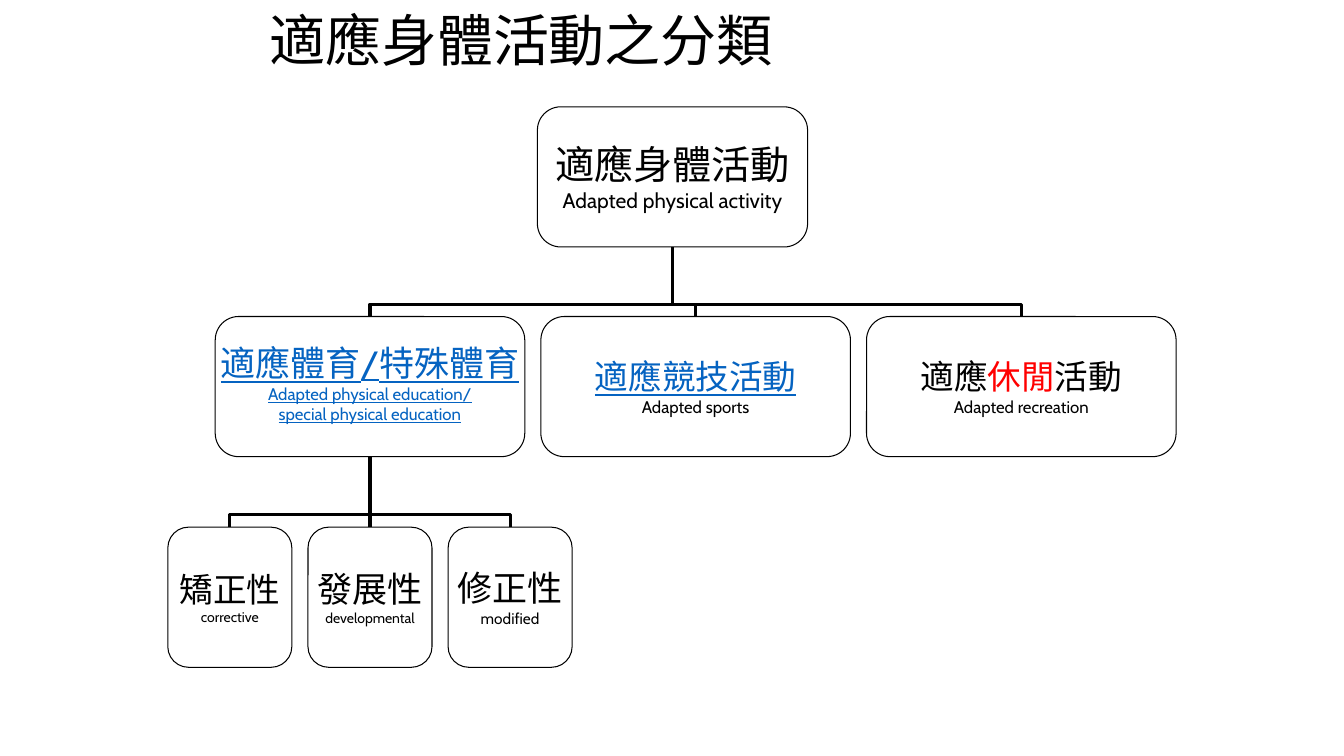
import pptx
import pptx.dml.color
import pptx.enum.shapes
import pptx.enum.text
import pptx.oxml.ns
import pptx.util
from lxml import etree

Inches = pptx.util.Inches
Pt = pptx.util.Pt

THEME = {
    "font": "Cabin", "cjk": "Noto Sans CJK SC",
    "ink": "000000", "link": "0563C1", "accent": "FF0000", "paper": "FFFFFF",
    "title": 40, "outline": 0.75, "branch": 2.25,
}

TITLE = "適應身體活動之分類"

# Each box: name, parent, bottom inset, paragraphs.
# Each paragraph: size, then runs of (text, colour, underlined).
ROWS = [
    {"top": 1.06, "center": 6.67, "width": 2.68, "pitch": 0, "boxes": [
        ("activity", None, 0, [
            (28, [("適應身體活動", "ink", False)]),
            (15, [("Adapted physical activity", "ink", False)])]),
    ]},
    {"top": 3.14, "center": 6.9, "width": 3.07, "pitch": 3.23, "boxes": [
        ("education", "activity", 0.07, [
            (25, [("適應體育/特殊體育", "link", True)]),
            (12, [("Adapted physical education/", "link", True)]),
            (12, [("special physical education", "link", True)])]),
        ("sports", "activity", 0, [
            (24, [("適應競技活動", "link", True)]),
            (12, [("Adapted sports", "ink", False)])]),
        ("recreation", "activity", 0, [
            (24, [("適應", "ink", False), ("休閒", "accent", False),
                  ("活動", "ink", False)]),
            (12, [("Adapted recreation", "ink", False)])]),
    ]},
    {"top": 5.23, "center": 3.67, "width": 1.23, "pitch": 1.39, "boxes": [
        ("corrective", "education", 0, [
            (24, [("矯正性", "ink", False)]),
            (10, [("corrective", "ink", False)])]),
        ("developmental", "education", 0, [
            (25, [("發展性", "ink", False)]),
            (10, [("developmental", "ink", False)])]),
        ("modified", "education", 0, [
            (25, [("修正性", "ink", False)]),
            (11, [("modified", "ink", False)])]),
    ]},
]
BOX_HEIGHT = 1.39
BEND = 17900  # share of the drop, in 1/100000, at which a branch turns
TOP, BOTTOM = 0, 2


def color(name):
    return pptx.dml.color.RGBColor.from_string(THEME[name])


def add_text(p, text, size, font="font", ink="ink", underline=False):
    r = p.add_run()
    r.text = text
    r.font.size = Pt(size)
    r.font.name = THEME[font]
    r.font.color.rgb = color(ink)
    r.font.underline = underline
    ea = etree.SubElement(r.font._element, pptx.oxml.ns.qn("a:ea"))
    ea.set("typeface", THEME["cjk"])


def add_box(s, left, top, width, inset, paragraphs):
    sp = s.shapes.add_shape(
        pptx.enum.shapes.MSO_SHAPE.ROUNDED_RECTANGLE,
        Inches(left), Inches(top), Inches(width), Inches(BOX_HEIGHT))
    sp.adjustments[0] = 0.167
    sp.shadow.inherit = False
    sp.fill.solid()
    sp.fill.fore_color.rgb = color("paper")
    sp.line.color.rgb = color("ink")
    sp.line.width = Pt(THEME["outline"])
    tf = sp.text_frame
    tf.word_wrap = False
    tf.vertical_anchor = pptx.enum.text.MSO_ANCHOR.MIDDLE
    tf.margin_left = tf.margin_top = tf.margin_right = 0
    tf.margin_bottom = Inches(inset)
    for i, (size, runs) in enumerate(paragraphs):
        p = tf.paragraphs[0] if i == 0 else tf.add_paragraph()
        p.alignment = pptx.enum.text.PP_ALIGN.CENTER
        for text, ink, underline in runs:
            add_text(p, text, size, ink=ink, underline=underline)
    return sp


def add_branch(s, child, parent):
    """Join a box's top to its parent's bottom, turning just above the box."""
    kinds = pptx.enum.shapes.MSO_CONNECTOR
    x1, y1 = child.left + child.width // 2, child.top
    x2, y2 = parent.left + parent.width // 2, parent.top + parent.height
    bent = abs(x1 - x2) > Inches(0.05)
    cxn = s.shapes.add_connector(
        kinds.ELBOW if bent else kinds.STRAIGHT, x1, y1, x2, y2)
    cxn.begin_connect(child, TOP)
    cxn.end_connect(parent, BOTTOM)
    cxn.line.color.rgb = color("ink")
    cxn.line.width = Pt(THEME["branch"])
    sp_pr = cxn._element.spPr
    etree.SubElement(sp_pr, pptx.oxml.ns.qn("a:effectLst"))
    if not bent:
        return
    # An elbow starts out sideways, so its frame is laid down and turned.
    drop, shift = y1 - y2, abs(x1 - x2)
    cxn.left, cxn.top = (x1 + x2 - drop) // 2, (y1 + y2 - shift) // 2
    cxn.width, cxn.height = drop, shift
    right = x1 > x2
    xfrm = sp_pr.find(pptx.oxml.ns.qn("a:xfrm"))
    xfrm.set("rot", str((90 if right else 270) * 60000))
    xfrm.set("flipH", "1" if right else "0")
    xfrm.set("flipV", "0")
    guides = sp_pr.find(pptx.oxml.ns.qn("a:prstGeom")).get_or_add_avLst()
    gd = etree.SubElement(guides, pptx.oxml.ns.qn("a:gd"))
    gd.set("name", "adj1")
    gd.set("fmla", f"val {BEND}")


def add_title(s):
    title = s.shapes.title
    title.left, title.top = Inches(2.57), Inches(-0.19)
    title.width, title.height = Inches(8.5), Inches(1.25)
    tf = title.text_frame
    tf.word_wrap = True
    tf.auto_size = pptx.enum.text.MSO_AUTO_SIZE.NONE
    tf.vertical_anchor = pptx.enum.text.MSO_ANCHOR.MIDDLE
    p = tf.paragraphs[0]
    p.alignment = pptx.enum.text.PP_ALIGN.LEFT
    p.line_spacing = 0.9
    add_text(p, TITLE, THEME["title"], font="cjk")


def main():
    prs = pptx.Presentation()
    prs.slide_width, prs.slide_height = Inches(13.33), Inches(7.5)
    s = prs.slides.add_slide(prs.slide_layouts[5])
    add_title(s)
    boxes = {}
    for row in ROWS:
        middle = (len(row["boxes"]) - 1) / 2
        for i, (name, parent, inset, paragraphs) in enumerate(row["boxes"]):
            left = row["center"] + (i - middle) * row["pitch"] - row["width"] / 2
            boxes[name] = add_box(
                s, left, row["top"], row["width"], inset, paragraphs)
            if parent:
                add_branch(s, boxes[name], boxes[parent])
    prs.save("out.pptx")


if __name__ == "__main__":
    main()
